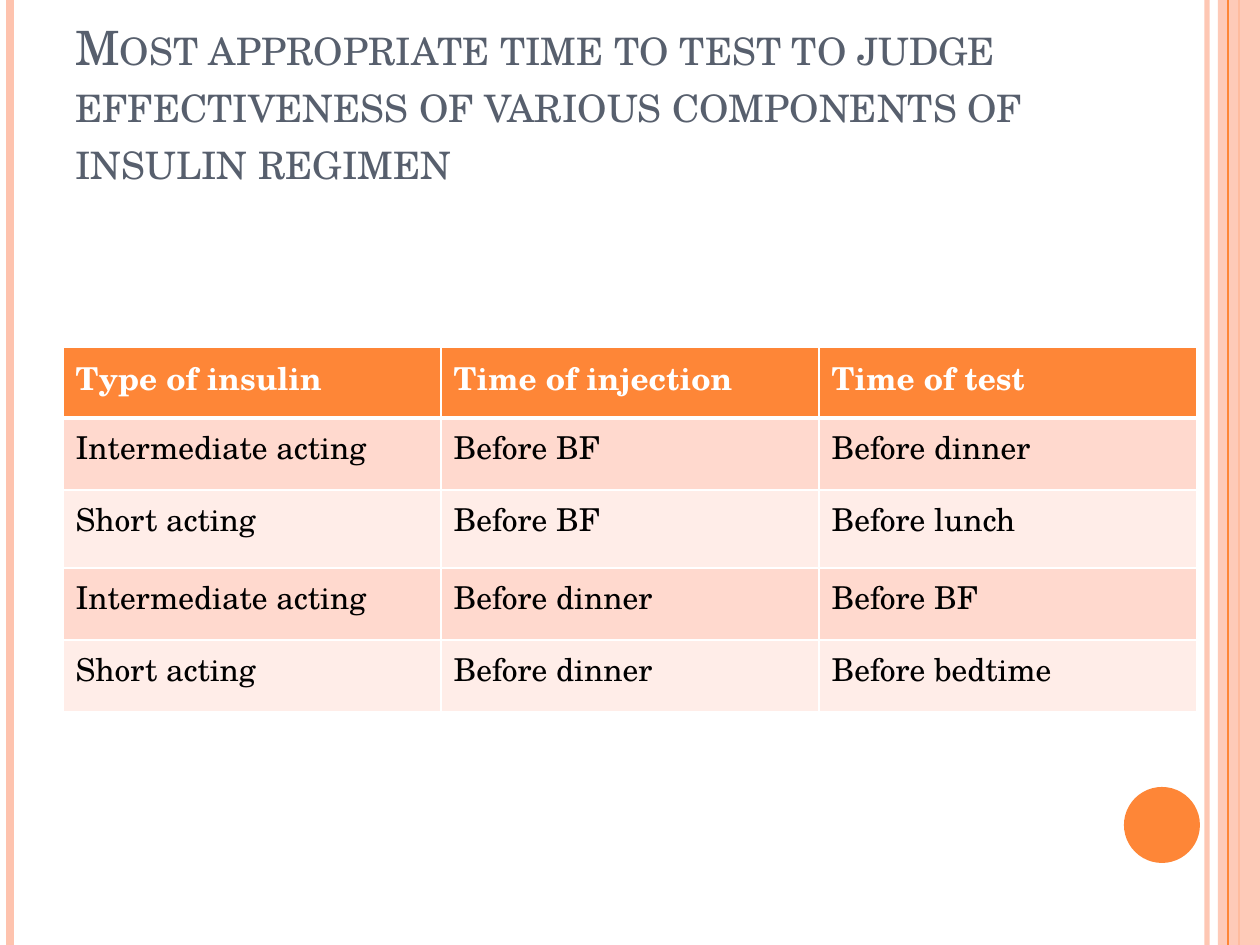
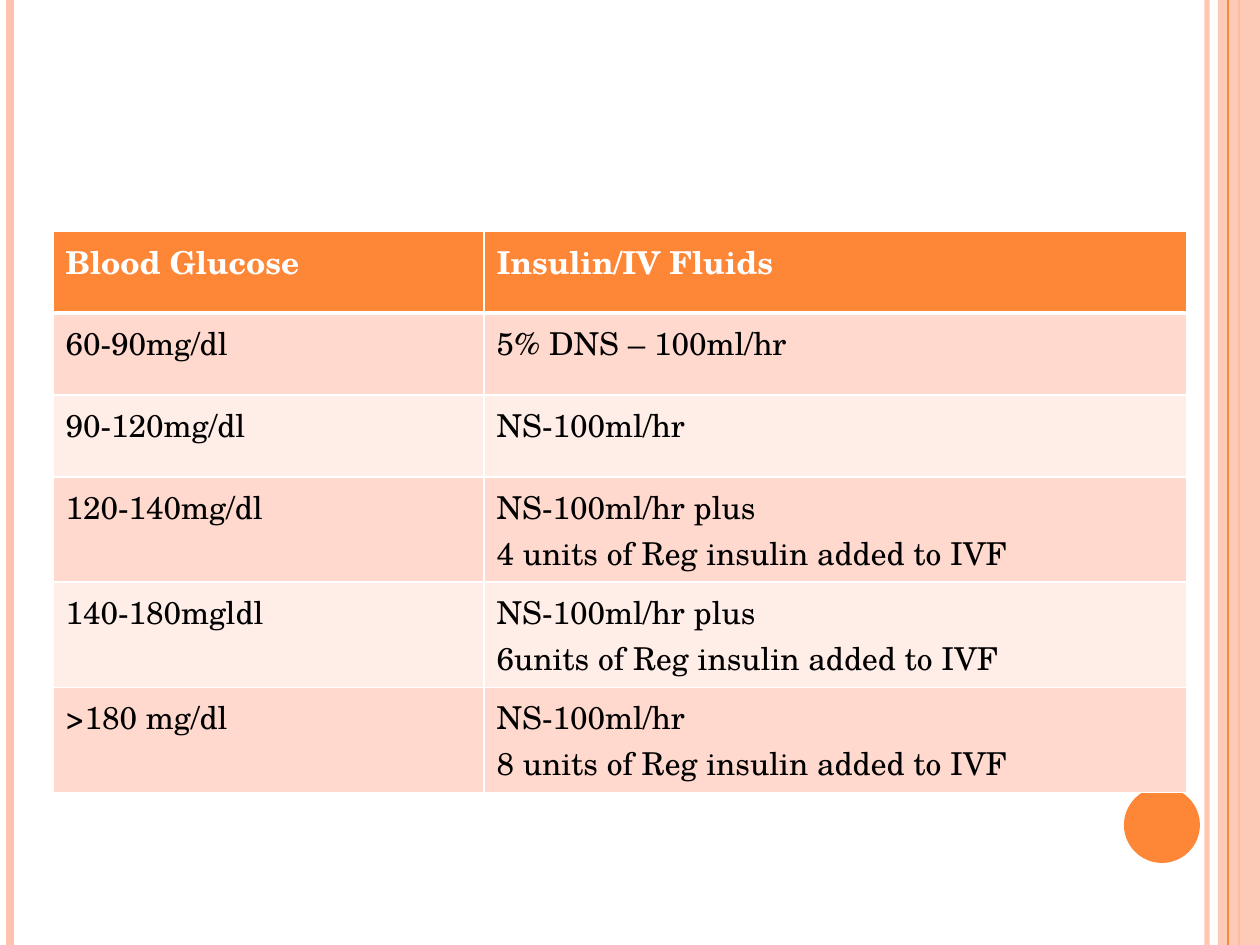
"""Build two slides on insulin timing and fluids, sharing one striped frame."""
from dataclasses import dataclass

from lxml.etree import SubElement
from pptx import Presentation
from pptx.dml.color import RGBColor
from pptx.enum.shapes import MSO_CONNECTOR, MSO_SHAPE
from pptx.enum.text import MSO_ANCHOR
from pptx.oxml.ns import qn
from pptx.util import Emu, Pt

EMU_PER_PX = 914400 / 126
WIDTH, HEIGHT = 1260, 945
FONT = "TeX Gyre Schola"
ORANGE, PEACH, SLATE = "FE8637", "FEC3AE", "575F6D"
WHITE, BLACK = "FFFFFF", "000000"
BANDS = ("FFD9CE", "FFEDE8")


@dataclass(frozen=True)
class Stripe:
    x: int
    color: str
    weight: float
    opacity: int = 100


@dataclass(frozen=True)
class Panel:
    kind: MSO_SHAPE
    x: int
    y: int
    w: int
    h: int
    color: str
    opacity: int = 100


@dataclass(frozen=True)
class Grid:
    x: int
    y: int
    cols: tuple[int, ...]
    heights: tuple[int, ...]
    rows: tuple[tuple[str, ...], ...]


FRAME = (
    Stripe(1207, PEACH, 3, 93),
    Stripe(10, PEACH, 4.5),
    Stripe(1239, ORANGE, 1.5),
    Panel(MSO_SHAPE.RECTANGLE, 1218, 0, 42, HEIGHT, PEACH, 87),
    Stripe(1228, ORANGE, 0.75),
    Panel(MSO_SHAPE.OVAL, 1124, 787, 76, 76, ORANGE),
)

TITLE = ("Most appropriate time to test to judge effectiveness of "
         "various components of insulin regimen")

TEST_TIMES = Grid(63, 347, (378,) * 3, (71, 72, 78, 72, 72), (
    ("Type of insulin", "Time of injection", "Time of test"),
    ("Intermediate acting", "Before BF", "Before dinner"),
    ("Short acting", "Before BF", "Before lunch"),
    ("Intermediate acting", "Before dinner", "Before BF"),
    ("Short acting", "Before dinner", "Before bedtime"),
))

FLUIDS = Grid(53, 231, (431, 703), (82,) * 6, (
    ("Blood Glucose", "Insulin/IV Fluids"),
    ("60-90mg/dl", "5% DNS – 100ml/hr"),
    ("90-120mg/dl", "NS-100ml/hr"),
    ("120-140mg/dl", "NS-100ml/hr plus\n4 units of Reg insulin added to IVF"),
    ("140-180mgldl", "NS-100ml/hr plus\n6units of Reg insulin added to IVF"),
    (">180 mg/dl", "NS-100ml/hr\n8 units of Reg insulin added to IVF"),
))


def px(n: int) -> Emu:
    """Convert pixels to EMU."""
    return Emu(round(n * EMU_PER_PX))


def paint(target, color: str, opacity: int = 100) -> None:
    """Fill a fill format with a solid colour."""
    target.solid()
    target.fore_color.rgb = RGBColor.from_string(color)
    if opacity < 100:
        rgb = target._xPr.find(".//" + qn("a:srgbClr"))
        SubElement(rgb, qn("a:alpha"), val=str(opacity * 1000))


def style_text(tf, size: int, color: str, bold: bool = False) -> None:
    """Format every run of a text frame."""
    for p in tf.paragraphs:
        for r in p.runs:
            r.font.name = FONT
            r.font.size = Pt(size)
            r.font.bold = bold
            r.font.color.rgb = RGBColor.from_string(color)


def draw_stripe(slide, stripe: Stripe) -> None:
    """Draw a full-height vertical line."""
    x = px(stripe.x)
    s = slide.shapes.add_connector(MSO_CONNECTOR.STRAIGHT, x, 0, x, px(HEIGHT))
    s.line.width = Pt(stripe.weight)
    paint(s.line.fill, stripe.color, stripe.opacity)
    SubElement(s._element.spPr, qn("a:effectLst"))


def draw_panel(slide, panel: Panel) -> None:
    """Draw a filled shape without an outline."""
    s = slide.shapes.add_shape(panel.kind, px(panel.x), px(panel.y),
                               px(panel.w), px(panel.h))
    s.shadow.inherit = False
    paint(s.fill, panel.color, panel.opacity)
    s.line.fill.background()


def draw_title(slide, text: str) -> None:
    """Add the small-caps slide title."""
    s = slide.shapes.add_textbox(px(63), px(38), px(1029), px(157))
    tf = s.text_frame
    tf.word_wrap = True
    tf.vertical_anchor = MSO_ANCHOR.BOTTOM
    tf.text = text
    style_text(tf, 27, SLATE)
    tf.paragraphs[0].runs[0].font._element.set("cap", "small")


def add_border(cell, side: str, weight: int) -> None:
    """Add a white border to one side of a cell."""
    ln = SubElement(cell._tc.get_or_add_tcPr(), qn(f"a:ln{side}"),
                    w=str(Pt(weight)))
    fill = SubElement(ln, qn("a:solidFill"))
    SubElement(fill, qn("a:srgbClr"), val=WHITE)


def draw_grid(slide, grid: Grid) -> None:
    """Draw a table with an orange header and banded rows."""
    table = slide.shapes.add_table(
        len(grid.rows), len(grid.cols), px(grid.x), px(grid.y),
        px(sum(grid.cols)), px(sum(grid.heights))).table
    for column, width in zip(table.columns, grid.cols):
        column.width = px(width)
    for i, (row, height) in enumerate(zip(grid.rows, grid.heights)):
        table.rows[i].height = px(height)
        header = i == 0
        for j, text in enumerate(row):
            cell = table.cell(i, j)
            cell.text_frame.text = text
            style_text(cell.text_frame, 18, WHITE if header else BLACK, header)
            weights = {"L": 1, "R": 1, "T": 3 if i == 1 else 1,
                       "B": 3 if header else 1}
            for side, weight in weights.items():
                add_border(cell, side, weight)
            paint(cell.fill, ORANGE if header else BANDS[(i - 1) % 2])


def add_slide(prs, grid: Grid, title: str = "") -> None:
    """Add a framed slide with a table and an optional title."""
    slide = prs.slides.add_slide(prs.slide_layouts[6])
    paint(slide.background.fill, WHITE)
    for part in FRAME:
        if isinstance(part, Stripe):
            draw_stripe(slide, part)
        else:
            draw_panel(slide, part)
    if title:
        draw_title(slide, title)
    draw_grid(slide, grid)


def main() -> None:
    """Build and save the presentation."""
    prs = Presentation()
    prs.slide_width, prs.slide_height = px(WIDTH), px(HEIGHT)
    add_slide(prs, TEST_TIMES, TITLE)
    add_slide(prs, FLUIDS)
    prs.save("out.pptx")


if __name__ == "__main__":
    main()
